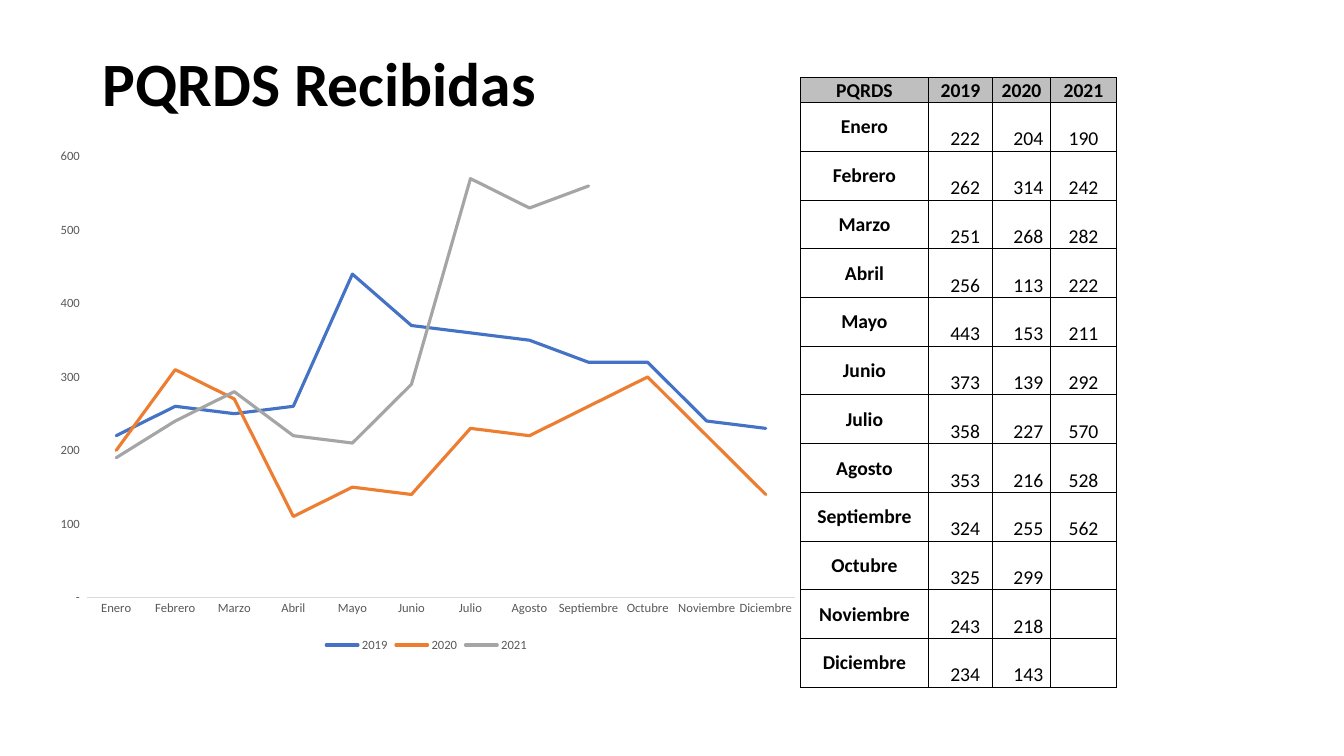
from lxml.etree import SubElement
from pptx import Presentation
from pptx.chart.data import CategoryChartData
from pptx.dml.color import RGBColor
from pptx.enum.chart import XL_CHART_TYPE, XL_LEGEND_POSITION, XL_TICK_MARK
from pptx.enum.text import MSO_ANCHOR, MSO_AUTO_SIZE, PP_ALIGN
from pptx.oxml.ns import qn
from pptx.util import Cm, Pt

FONT = "Calibri"
BLACK = RGBColor(0x00, 0x00, 0x00)
HEADER_GREY = RGBColor(0xBF, 0xBF, 0xBF)
LABEL_GREY = RGBColor(0x59, 0x59, 0x59)
AXIS_GREY = RGBColor(0xD9, 0xD9, 0xD9)
BLUE = RGBColor(0x44, 0x72, 0xC4)
ORANGE = RGBColor(0xED, 0x7D, 0x31)
GREY = RGBColor(0xA5, 0xA5, 0xA5)

MONTHS = ["Enero", "Febrero", "Marzo", "Abril", "Mayo", "Junio", "Julio",
          "Agosto", "Septiembre", "Octubre", "Noviembre", "Diciembre"]
REQUESTS = {
    "2019": [222, 262, 251, 256, 443, 373, 358, 353, 324, 325, 243, 234],
    "2020": [204, 314, 268, 113, 153, 139, 227, 216, 255, 299, 218, 143],
    "2021": [190, 242, 282, 222, 211, 292, 570, 528, 562, None, None, None],
}
YEAR_COLORS = [BLUE, ORANGE, GREY]
NUMBER_FORMAT = r'_(* #,##0_);_(* \(#,##0\);_(* "-"_);_(@_)'
COLUMN_WIDTHS = [Cm(3.23), Cm(1.61), Cm(1.47), Cm(1.65)]
RIGHT_INSETS = {1: Cm(0.31), 2: Cm(0.19)}


def style_font(font, size, color, bold=False):
    """Apply the slide's typeface with a size, colour and weight."""
    font.name = FONT
    font.size = Pt(size)
    font.bold = bold
    font.color.rgb = color


def add_title(slide, left, top, width, height):
    """Place and format the title placeholder."""
    title = slide.shapes.title
    title.left, title.top, title.width, title.height = left, top, width, height
    frame = title.text_frame
    frame.text = "PQRDS Recibidas"
    frame.auto_size = MSO_AUTO_SIZE.NONE
    frame.vertical_anchor = MSO_ANCHOR.MIDDLE
    paragraph = frame.paragraphs[0]
    paragraph.alignment = PP_ALIGN.LEFT
    paragraph.line_spacing = 0.9
    style_font(paragraph.runs[0].font, 44, BLACK, bold=True)


def add_trend_chart(slide, left, top, width, height):
    """Draw one line per year across the months, rounded to tens."""
    data = CategoryChartData(number_format=NUMBER_FORMAT)
    data.categories = MONTHS
    for year, values in REQUESTS.items():
        data.add_series(year, [v and round(v, -1) for v in values])
    chart = slide.shapes.add_chart(
        XL_CHART_TYPE.LINE, left, top, width, height, data).chart
    style_font(chart.font, 10, BLACK)
    chart.has_title = False
    chart.has_legend = True
    chart.legend.position = XL_LEGEND_POSITION.BOTTOM
    chart.legend.include_in_layout = False
    style_font(chart.legend.font, 9, LABEL_GREY)

    for axis in (chart.category_axis, chart.value_axis):
        axis.has_major_gridlines = False
        axis.major_tick_mark = axis.minor_tick_mark = XL_TICK_MARK.NONE
        style_font(axis.tick_labels.font, 9, LABEL_GREY)
    chart.category_axis.format.line.color.rgb = AXIS_GREY
    chart.category_axis.format.line.width = Pt(0.75)
    chart.value_axis.format.line.fill.background()
    chart.value_axis.tick_labels.number_format = NUMBER_FORMAT
    chart.value_axis.tick_labels.number_format_is_linked = False

    plot = chart.plots[0]
    plot.vary_by_categories = False
    for series, color in zip(plot.series, YEAR_COLORS):
        series.smooth = False
        series.format.line.color.rgb = color
        series.format.line.width = Pt(2.25)
        series._element.find(".//" + qn("a:ln")).set("cap", "rnd")


def add_borders(cell):
    """Give a cell a thin black line on every side."""
    properties = cell._tc.get_or_add_tcPr()
    for position, side in enumerate(("a:lnL", "a:lnR", "a:lnT", "a:lnB")):
        line = SubElement(properties, qn(side), w=str(Pt(0.5)))
        fill = SubElement(line, qn("a:solidFill"))
        SubElement(fill, qn("a:srgbClr"), val=str(BLACK))
        properties.insert(position, line)


def fill_cell(cell, text, row, column):
    """Write and format one cell according to its row and column."""
    is_label = row == 0 or column == 0
    cell.margin_left = cell.margin_top = cell.margin_right = Cm(0.02)
    cell.margin_bottom = 0
    cell.vertical_anchor = MSO_ANCHOR.MIDDLE if is_label else MSO_ANCHOR.BOTTOM
    cell.text_frame.text = text
    paragraph = cell.text_frame.paragraphs[0]
    paragraph.alignment = PP_ALIGN.CENTER
    if not is_label and column in RIGHT_INSETS:
        paragraph.alignment = PP_ALIGN.RIGHT
        cell.margin_right = RIGHT_INSETS[column]
    style_font(paragraph.font, 14, BLACK, bold=is_label)
    for run in paragraph.runs:
        style_font(run.font, 14, BLACK, bold=is_label)
    if row == 0:
        cell.fill.solid()
        cell.fill.fore_color.rgb = HEADER_GREY
    else:
        cell.fill.background()
    add_borders(cell)


def add_requests_table(slide, left, top, width, height):
    """Build the table of monthly requests by year."""
    rows = [["PQRDS", *REQUESTS]]
    for month, *values in zip(MONTHS, *REQUESTS.values()):
        rows.append([month] + ["" if v is None else str(v) for v in values])
    table = slide.shapes.add_table(
        len(rows), len(rows[0]), left, top, width, height).table
    table.horz_banding = False
    for column, column_width in zip(table.columns, COLUMN_WIDTHS):
        column.width = column_width
    header_height = Cm(0.63)
    month_height = (height - header_height) // len(MONTHS)
    for r, texts in enumerate(rows):
        table.rows[r].height = month_height if r else header_height
        for c, text in enumerate(texts):
            fill_cell(table.cell(r, c), text, r, c)


def main():
    """Build and save the presentation."""
    presentation = Presentation()
    presentation.slide_width = Cm(33.87)
    presentation.slide_height = Cm(19.05)
    slide = presentation.slides.add_slide(presentation.slide_layouts[5])
    add_title(slide, Cm(2.33), Cm(0.57), Cm(29.21), Cm(3.23))
    add_trend_chart(slide, Cm(1.07), Cm(3.5), Cm(19.36), Cm(13.04))
    add_requests_table(slide, Cm(20.17), Cm(1.95), sum(COLUMN_WIDTHS), Cm(15.37))
    presentation.save("out.pptx")


if __name__ == "__main__":
    main()
